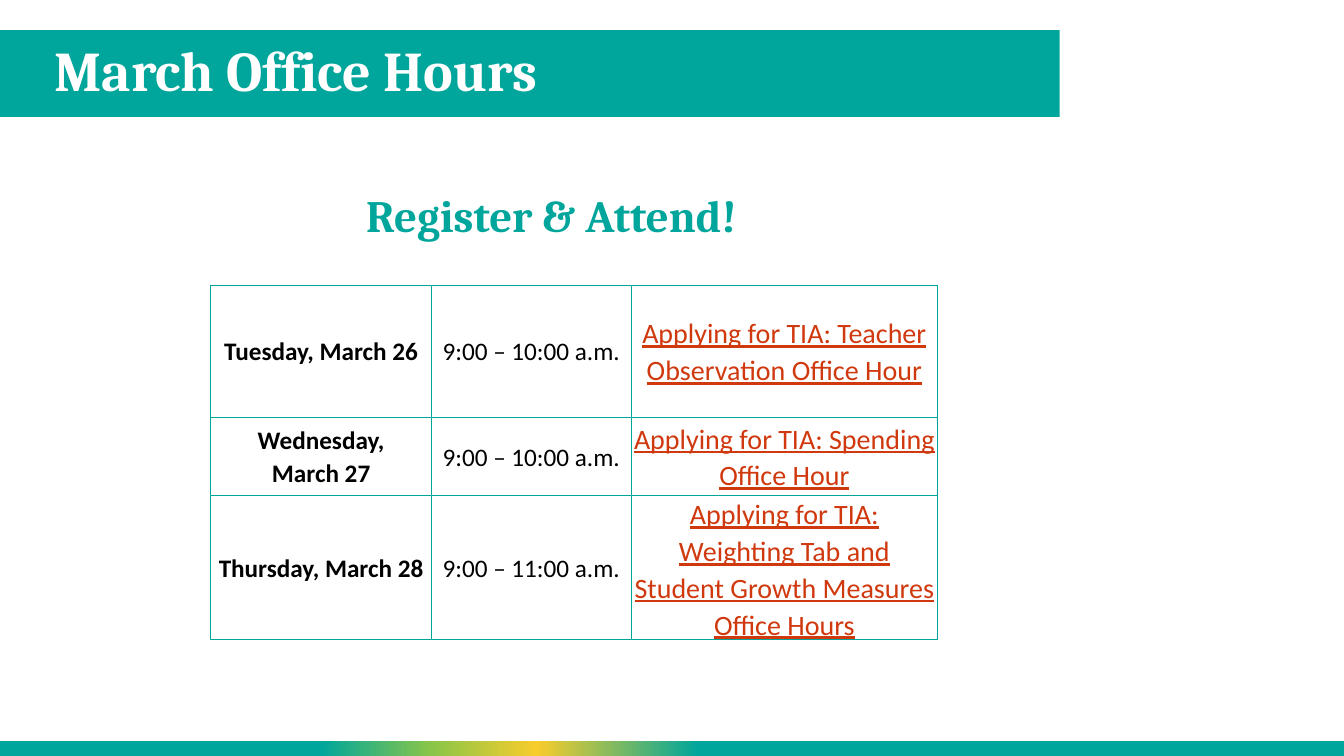
from lxml import etree
from pptx import Presentation
from pptx.dml.color import RGBColor
from pptx.enum.shapes import MSO_SHAPE
from pptx.enum.text import MSO_ANCHOR, PP_ALIGN
from pptx.oxml import parse_xml
from pptx.oxml.ns import nsdecls, qn
from pptx.util import Inches, Pt

LEFT, CENTER = PP_ALIGN.LEFT, PP_ALIGN.CENTER
MIDDLE = MSO_ANCHOR.MIDDLE
RECT = MSO_SHAPE.RECTANGLE
TITLE_ONLY = 5

COLORS = {"teal": "00A69B", "green": "87C54A", "yellow": "F8CC2B",
          "white": "FFFFFF", "black": "000000", "link": "D0380E"}
FOOTER_STOPS = [(0, "teal"), (24, "teal"), (32, "green"),
                (40, "yellow"), (52, "teal"), (100, "teal")]

COL_WIDTHS = [2.19, 1.98, 3.04]
ROW_HEIGHTS = [1.31, 0.78, 1.31]
SESSIONS = [
    ("Tuesday, March 26", "9:00 – 10:00 a.m.",
     "Applying for TIA: Teacher Observation Office Hour"),
    ("Wednesday,\nMarch 27", "9:00 – 10:00 a.m.",
     "Applying for TIA: Spending Office Hour"),
    ("Thursday, March 28", "9:00 – 11:00 a.m.",
     "Applying for TIA: Weighting Tab and Student Growth Measures Office Hours"),
]
COL_STYLES = [
    dict(size=18, color="black", bold=True),
    dict(size=18, color="black"),
    dict(size=20, color="link", underline=True),
]


def rgb(name):
    return RGBColor.from_string(COLORS[name])


class SlideBuilder:
    heading_font = "Cambria"
    body_font = "Calibri"

    def __init__(self, s):
        self.s = s

    def set_text(self, tf, text, font, size, color, bold=False, underline=False,
                 align=CENTER, spacing=1.0):
        tf.text = text
        for p in tf.paragraphs:
            p.alignment = align
            p.line_spacing = spacing
            p.space_before = Pt(0)
            p.font.name = font
            p.font.size = Pt(size)
            p.font.bold = bold
            p.font.underline = underline
            p.font.color.rgb = rgb(color)

    def bar(self, left, top, width, height, stops=None):
        """Add a teal bar, or one with gradient stops, behind everything else."""
        shape = self.s.shapes.add_shape(
            RECT, Inches(left), Inches(top), Inches(width), Inches(height))
        shape.shadow.inherit = False
        shape.line.fill.background()
        if stops:
            shape.fill.gradient()
            shape.fill.gradient_angle = 0
            gs_list = shape._element.spPr.find(".//" + qn("a:gsLst"))
            for gs in list(gs_list):
                gs_list.remove(gs)
            for pos, name in stops:
                gs = etree.SubElement(gs_list, qn("a:gs"), pos=str(pos * 1000))
                etree.SubElement(gs, qn("a:srgbClr"), val=COLORS[name])
        else:
            shape.fill.solid()
            shape.fill.fore_color.rgb = rgb("teal")
        self.s.shapes.element.insert(2, shape._element)

    def title(self, text, left, top, width, height):
        sp = self.s.shapes.title
        sp.left, sp.top = Inches(left), Inches(top)
        sp.width, sp.height = Inches(width), Inches(height)
        tf = sp.text_frame
        tf.vertical_anchor = MIDDLE
        self.set_text(tf, text, self.heading_font, 40, "white", bold=True,
                      align=LEFT, spacing=0.9)

    def subtitle(self, text, left, top, width, height):
        sp = self.s.shapes.add_textbox(
            Inches(left), Inches(top), Inches(width), Inches(height))
        tf = sp.text_frame
        tf.word_wrap = True
        tf.vertical_anchor = MIDDLE
        tf.margin_left = tf.margin_right = Inches(0.5)
        self.set_text(tf, text, self.heading_font, 32, "teal", bold=True,
                      spacing=1.5)

    def cell_borders(self, cell):
        tc_pr = cell._tc.get_or_add_tcPr()
        for i, side in enumerate(("lnL", "lnR", "lnT", "lnB")):
            tc_pr.insert(i, parse_xml(
                f'<a:{side} {nsdecls("a")} w="{Pt(1)}"><a:solidFill>'
                f'<a:srgbClr val="{COLORS["teal"]}"/></a:solidFill></a:{side}>'))

    def table(self, rows, left, top):
        table = self.s.shapes.add_table(
            len(rows), len(COL_WIDTHS), Inches(left), Inches(top),
            Inches(sum(COL_WIDTHS)), Inches(sum(ROW_HEIGHTS))).table
        table.first_row = table.horz_banding = False
        for col, width in zip(table.columns, COL_WIDTHS):
            col.width = Inches(width)
        for row, height, texts in zip(table.rows, ROW_HEIGHTS, rows):
            row.height = Inches(height)
            for cell, text, style in zip(row.cells, texts, COL_STYLES):
                cell.margin_left = cell.margin_right = 0
                cell.margin_top = cell.margin_bottom = 0
                cell.vertical_anchor = MIDDLE
                cell.fill.solid()
                cell.fill.fore_color.rgb = rgb("white")
                self.cell_borders(cell)
                self.set_text(cell.text_frame, text, self.body_font,
                              spacing=1.07, **style)


def main():
    prs = Presentation()
    prs.slide_width, prs.slide_height = Inches(13.33), Inches(7.5)
    b = SlideBuilder(prs.slides.add_slide(prs.slide_layouts[TITLE_ONLY]))
    b.bar(-0.01, 0.3, 10.52, 0.86)
    b.bar(-0.01, 7.35, 13.34, 0.15, FOOTER_STOPS)
    b.title("March Office Hours", 0.44, 0.29, 10.06, 0.88)
    b.subtitle("Register & Attend!", 3.08, 1.51, 4.78, 0.98)
    b.table(SESSIONS, 2.09, 2.83)
    prs.save("out.pptx")


if __name__ == "__main__":
    main()
